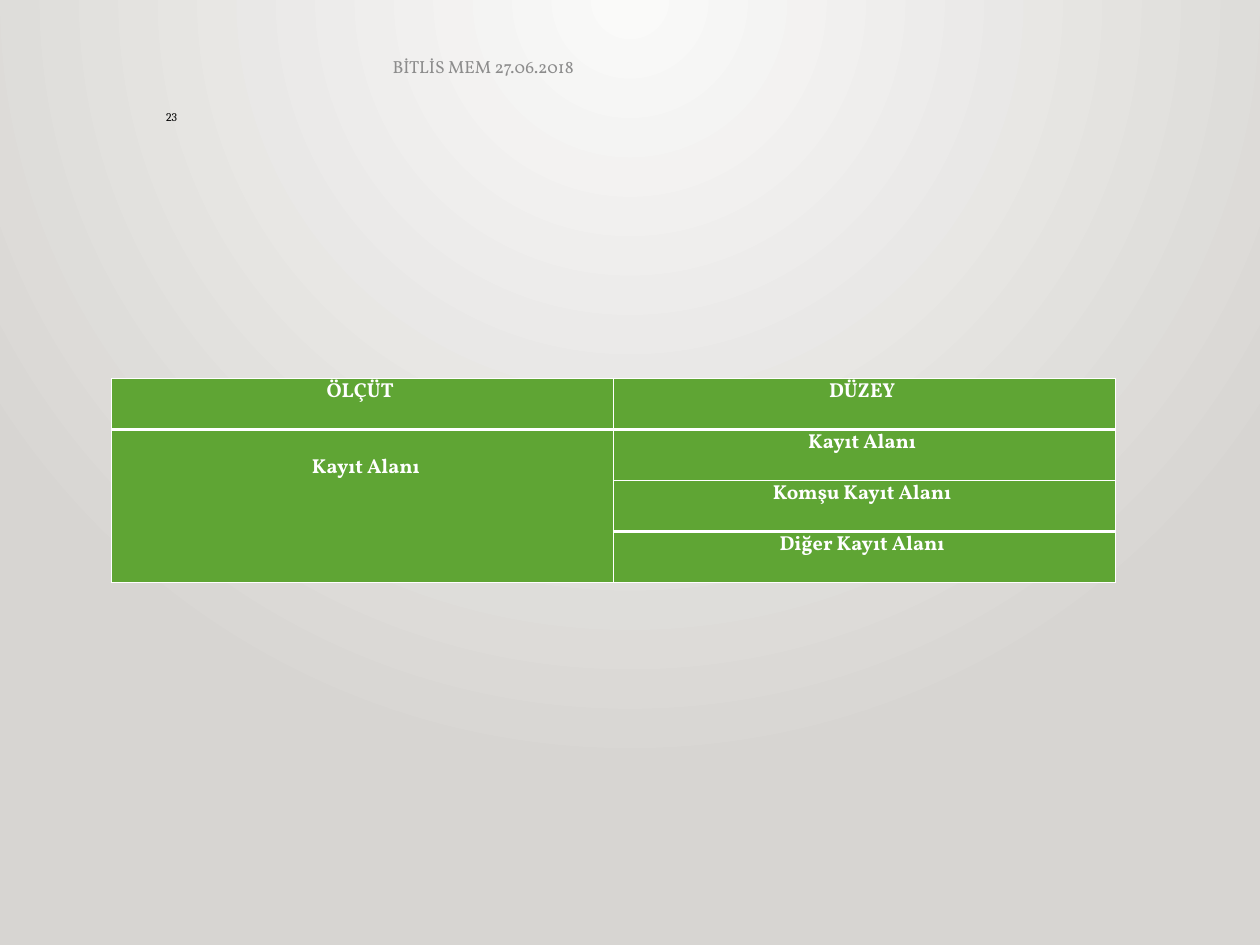
from lxml.etree import SubElement
from pptx import Presentation
from pptx.dml.color import RGBColor
from pptx.enum.text import MSO_ANCHOR, PP_ALIGN
from pptx.oxml import parse_xml
from pptx.oxml.ns import qn
from pptx.util import Pt

SIZE = (1122.5, 841.7)
HEX = {"glow": "FAFAF9", "edge": "D7D5D2", "green": "5FA534",
       "white": "FFFFFF", "gray": "8C8C8C", "black": "000000"}
TITLE = "BİTLİS MEM 27.06.2018"
NUMBER = "23"
HEADS = ["ÖLÇÜT", "DÜZEY"]
GROUP = "Kayıt Alanı"
LEVELS = ["Kayıt Alanı", "Komşu Kayıt Alanı", "Diğer Kayıt Alanı"]
GRID = (99.4, 337, 447.1, 45.4)
THIN, THICK = 1, 3
NS = "http://schemas.openxmlformats.org/drawingml/2006/main"


def color(name):
    """Return the named colour."""
    return RGBColor.from_string(HEX[name])


def write(frame, text, size, font="Vollkorn", ink="white", bold=False,
          align=PP_ALIGN.CENTER, line=None, pad=(0, 0, 0, 0)):
    """Put one formatted paragraph in a text frame or cell."""
    (frame.margin_left, frame.margin_top,
     frame.margin_right, frame.margin_bottom) = [Pt(n) for n in pad]
    body = getattr(frame, "text_frame", frame)
    body.word_wrap = True
    para = body.paragraphs[0]
    para.alignment = align
    if line:
        para.line_spacing = Pt(line)
    run = para.add_run()
    run.text = text
    run.font.size, run.font.name, run.font.bold = Pt(size), font, bold
    run.font.color.rgb = color(ink)


def border(cell, top=THIN, bottom=THIN):
    """Draw the four white edges of a cell."""
    props = cell._tc.get_or_add_tcPr()
    edges = {"lnL": THIN, "lnR": THIN, "lnT": top, "lnB": bottom}
    for spot, (tag, width) in enumerate(edges.items()):
        edge = SubElement(props, qn("a:" + tag), w=str(Pt(width)))
        fill = SubElement(edge, qn("a:solidFill"))
        SubElement(fill, qn("a:srgbClr"), val=HEX["white"])
        props.insert(spot, edge)


def fill_cell(cell, text, top=THIN, bottom=THIN, **style):
    """Colour, edge and label one cell."""
    cell.fill.solid()
    cell.fill.fore_color.rgb = color("green")
    border(cell, top, bottom)
    write(cell, text, 18, bold=True, **style)


def paint(slide):
    """Give the slide a round glow from its top edge."""
    fill = slide.background.fill
    fill.gradient()
    for stop, name in zip(fill.gradient_stops, ("glow", "edge")):
        stop.color.rgb = color(name)
    line = next(slide._element.iter(qn("a:lin")))
    line.getparent().replace(line, parse_xml(
        f'<a:path xmlns:a="{NS}" path="circle">'
        '<a:fillToRect l="43000" r="43000" b="100000"/></a:path>'))


def add_grid(slide):
    """Build the table of criteria and levels."""
    left, top, wide, high = GRID
    rows, cols = len(LEVELS) + 1, len(HEADS)
    table = slide.shapes.add_table(
        rows, cols, Pt(left), Pt(top), Pt(wide * cols), Pt(high * rows)).table
    table.horz_banding = False
    for col in table.columns:
        col.width = Pt(wide)
    for row in table.rows:
        row.height = Pt(high)
    style = {"line": 12.7, "pad": (0, 12.7, 4, 0)}
    for col, head in enumerate(HEADS):
        fill_cell(table.cell(0, col), head, bottom=THICK, **style)
    table.cell(1, 0).merge(table.cell(rows - 1, 0))
    fill_cell(table.cell(1, 0), GROUP, top=THICK, pad=(6, 22, 0, 0))
    tops = [THICK, THIN, THICK]
    ends = tops[1:] + [THIN]
    for row, (level, start, end) in enumerate(zip(LEVELS, tops, ends), 1):
        fill_cell(table.cell(row, 1), level, top=start, bottom=end, **style)


def add_label(slide, box, text, size, anchor=MSO_ANCHOR.TOP, **style):
    """Add a text box with one line."""
    frame = slide.shapes.add_textbox(*[Pt(n) for n in box]).text_frame
    frame.vertical_anchor = anchor
    write(frame, text, size, **style)


def main():
    """Build the slide and save it."""
    deck = Presentation()
    deck.slide_width, deck.slide_height = [Pt(n) for n in SIZE]
    slide = deck.slides.add_slide(deck.slide_layouts[6])
    paint(slide)
    add_grid(slide)
    add_label(slide, (188.6, 40.3, 483.8, 38.2), TITLE, 15.6,
              anchor=MSO_ANCHOR.MIDDLE, ink="gray")
    add_label(slide, (59.8, 97.9, 97.9, 61.9), NUMBER, 10.5,
              font="Cambria", ink="black", align=PP_ALIGN.RIGHT)
    deck.save("out.pptx")


if __name__ == "__main__":
    main()
